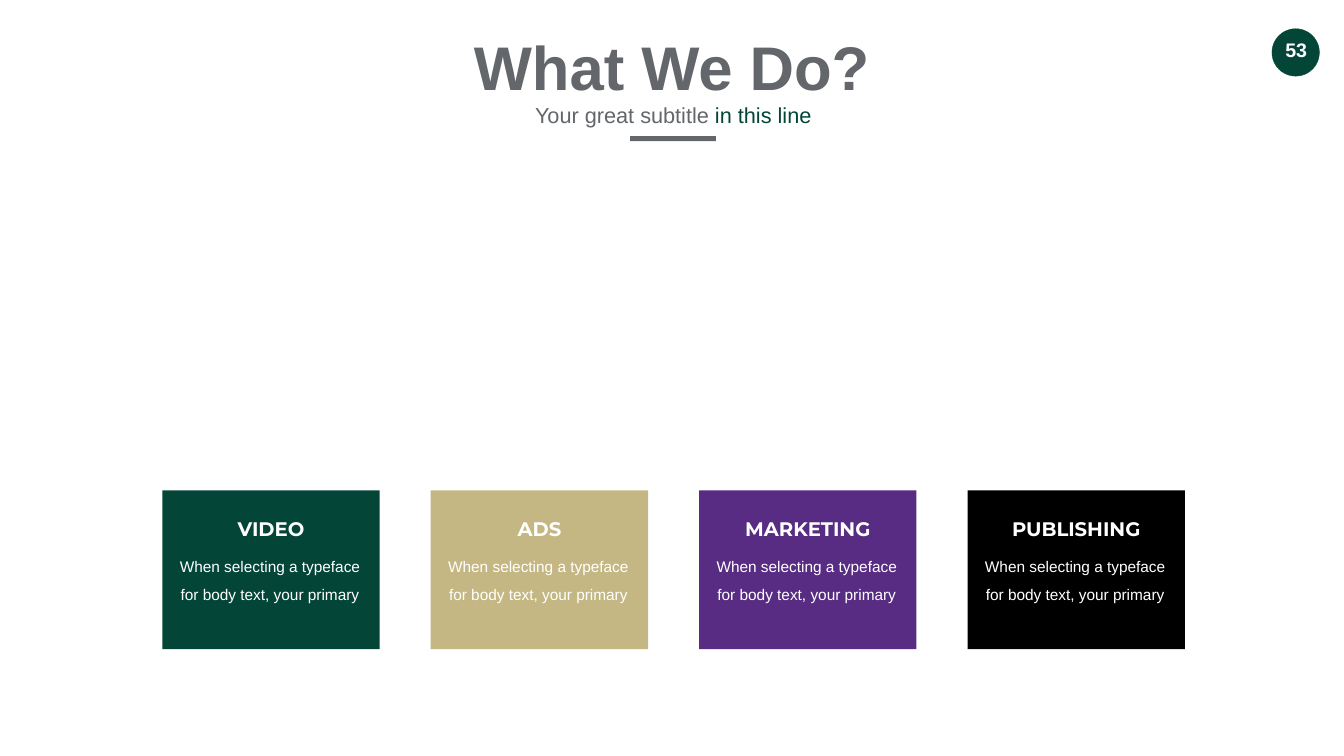
from pptx import Presentation
from pptx.dml.color import RGBColor
from pptx.enum.shapes import MSO_SHAPE as Shape
from pptx.enum.text import MSO_ANCHOR as Anchor, MSO_AUTO_SIZE as AutoSize, PP_ALIGN as Align
from pptx.util import Inches, Pt

GREEN = RGBColor(0x03, 0x46, 0x38)
SAND = RGBColor(0xC5, 0xB7, 0x83)
PURPLE = RGBColor(0x58, 0x2C, 0x83)
BLACK = RGBColor(0x00, 0x00, 0x00)
GRAY = RGBColor(0x63, 0x66, 0x6A)
WHITE = RGBColor(0xFF, 0xFF, 0xFF)

deck = Presentation()
deck.slide_width, deck.slide_height = Inches(26.66), Inches(15)
page = deck.slides.add_slide(deck.slide_layouts[6])

# All places are percentages of the slide's width and height
COLUMN, ROW = deck.slide_width / 100, deck.slide_height / 100


def add_block(kind, left, top, width, height, color):
    block = page.shapes.add_shape(kind, int(left * COLUMN), int(top * ROW),
                                  int(width * COLUMN), int(height * ROW))
    block.shadow.inherit = False
    block.fill.solid()
    block.fill.fore_color.rgb = color
    block.line.fill.background()
    return block


def add_text(left, top, width, height, runs, size, font="Arial", bold=False,
             inset=(0.1, 0.05), wrap=False, anchor=Anchor.TOP, spacing=None):
    box = page.shapes.add_textbox(int(left * COLUMN), int(top * ROW),
                                  int(width * COLUMN), int(height * ROW))
    frame = box.text_frame
    frame.word_wrap = wrap
    frame.auto_size = AutoSize.SHAPE_TO_FIT_TEXT
    frame.vertical_anchor = anchor
    frame.margin_left = frame.margin_right = Inches(inset[0])
    frame.margin_top = frame.margin_bottom = Inches(inset[1])
    para = frame.paragraphs[0]
    para.alignment = Align.CENTER
    para.line_spacing = spacing
    for text, color in runs:
        span = para.add_run()
        span.text = text
        span.font.name, span.font.size, span.font.bold = font, Pt(size), bold
        span.font.color.rgb = color


# Page number
badge = add_block(Shape.OVAL, 94.64, 3.8, 3.53, 6.27, GREEN)
badge.line.color.rgb = GREEN
badge.line.width = Pt(0.5)
add_text(94.79, 4.4, 3.3, 4.47, [("53", WHITE)], 28, bold=True, inset=(0.2, 0.1))

# Service cards
CARD_LEFT, CARD_TOP, CARD_WIDTH, CARD_HEIGHT = 12.08, 64.87, 16.17, 21
CARD_PITCH = 19.97
BODY = "When selecting a typeface for body text, your primary"
cards = [("VIDEO", 5.93, GREEN), ("ADS", 4.13, SAND),
         ("MARKETING", 10.84, PURPLE), ("PUBLISHING", 11.07, BLACK)]
for index, (heading, heading_width, color) in enumerate(cards):
    left = CARD_LEFT + index * CARD_PITCH
    add_block(Shape.RECTANGLE, left, CARD_TOP, CARD_WIDTH, CARD_HEIGHT, color)
    add_text(left + (CARD_WIDTH - heading_width) / 2, 68, heading_width, 3.8,
             [(heading, WHITE)], 28, font="Montserrat", bold=True, anchor=Anchor.MIDDLE)
    add_text(left + 0.11, 71.53, 15.79, 8.6, [(BODY, WHITE)], 22,
             inset=(0.24, 0.12), wrap=True, spacing=Pt(40.4))

# Title, rule and subtitle
add_text(34.73, 3.53, 30.5, 10.53, [("What We Do?", GRAY)], 88, bold=True)
add_block(Shape.RECTANGLE, 46.89, 18, 6.38, 0.67, GRAY)
add_text(38.78, 11.93, 22.62, 5.4,
         [("Your great subtitle ", GRAY), ("in this line", GREEN)], 31,
         inset=(0.24, 0.12), spacing=1.2)

deck.save("out.pptx")
